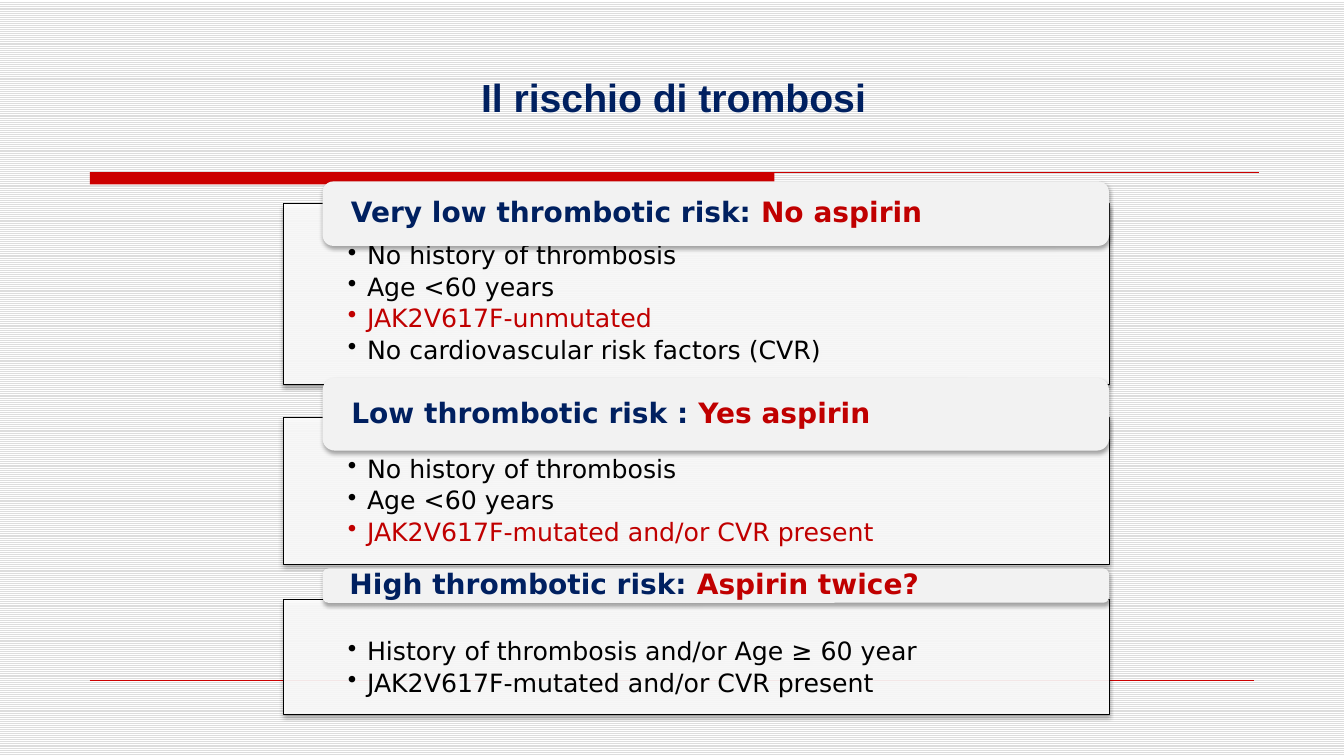
import dataclasses

import lxml.etree
import pptx
import pptx.dml.color
import pptx.enum.dml
import pptx.enum.shapes
import pptx.enum.text
import pptx.oxml
import pptx.oxml.ns
import pptx.util

PX = 9144  # EMU in one px, 100 px to the inch


@dataclasses.dataclass(frozen=True)
class Theme:
    navy: str = "002060"
    red: str = "C00000"
    rule: str = "CC0000"
    black: str = "000000"
    white: str = "FFFFFF"
    header: str = "F2F2F2"
    stripe: str = "DDDDDD"
    title_font: str = "Arial"
    text_font: str = "DejaVu Sans"
    title_size: int = 28
    header_size: int = 20
    item_size: int = 18


THEME = Theme()

BOX_LEFT, BOX_WIDTH = 281, 819
HEADER_LEFT, HEADER_WIDTH = 320, 780

# header top and height, box top and height, risk, advice, items (text, colour)
RISK_GROUPS = [
    (180, 64, 202, 179, "Very low thrombotic risk: ", "No aspirin", [
        ("No history of thrombosis", THEME.black),
        ("Age <60 years", THEME.black),
        ("JAK2V617F-unmutated", THEME.red),
        ("No cardiovascular risk factors (CVR)", THEME.black)]),
    (375, 72, 414, 146, "Low thrombotic risk : ", "Yes aspirin", [
        ("No history of thrombosis", THEME.black),
        ("Age <60 years", THEME.black),
        ("JAK2V617F-mutated and/or CVR present", THEME.red)]),
    (564, 34, 595, 114, "High thrombotic risk: ", "Aspirin twice?", [
        ("History of thrombosis and/or Age ≥ 60 year", THEME.black),
        ("JAK2V617F-mutated and/or CVR present", THEME.black)]),
]


def px(*lengths):
    return [pptx.util.Emu(length * PX) for length in lengths]


def rgb(colour):
    return pptx.dml.color.RGBColor.from_string(colour)


def add_child(parent, tag, **attributes):
    child = lxml.etree.SubElement(parent, pptx.oxml.ns.qn(tag))
    for name, value in attributes.items():
        child.set(name, str(value))
    return child


def set_font(font, name, size, colour=None, bold=False):
    font.name, font.size, font.bold = name, pptx.util.Pt(size), bold
    if colour:
        font.color.rgb = rgb(colour)


def set_frame(frame, margins, anchor):
    frame.word_wrap = True
    frame.vertical_anchor = anchor
    (frame.margin_left, frame.margin_top,
     frame.margin_right, frame.margin_bottom) = px(*margins)


def add_block(slide, kind, box, fill, line=None):
    shape = slide.shapes.add_shape(kind, *px(*box))
    shape.shadow.inherit = False
    shape.fill.solid()
    shape.fill.fore_color.rgb = rgb(fill)
    if line:
        shape.line.color.rgb = rgb(line)
        shape.line.width = pptx.util.Pt(0.75)
    else:
        shape.line.fill.background()
    return shape


def add_soft_shadow(shape):
    effects = shape._element.spPr.find(pptx.oxml.ns.qn("a:effectLst"))
    shadow = add_child(effects, "a:outerShdw", blurRad=pptx.util.Pt(3.1),
                       dist=pptx.util.Pt(1.8), dir=5400000, rotWithShape=0)
    colour = add_child(shadow, "a:srgbClr", val=THEME.black)
    add_child(colour, "a:alpha", val=35000)


def add_rule(slide, left, right, top, width):
    connector = slide.shapes.add_connector(
        pptx.enum.shapes.MSO_CONNECTOR.STRAIGHT, *px(left, top, right, top))
    connector.line.color.rgb = rgb(THEME.rule)
    connector.line.width = pptx.util.Pt(width)
    add_child(connector._element.spPr, "a:effectLst")


def add_title(slide, text):
    frame = slide.shapes.add_textbox(*px(237, 84, 862, 40)).text_frame
    set_frame(frame, (10, 5, 10, 5), pptx.enum.text.MSO_ANCHOR.BOTTOM)
    paragraph = frame.paragraphs[0]
    paragraph.text = text
    paragraph.alignment = pptx.enum.text.PP_ALIGN.CENTER
    set_font(paragraph.font, THEME.title_font, THEME.title_size, THEME.navy, True)


def add_item_box(slide, top, height, items):
    shape = add_block(slide, pptx.enum.shapes.MSO_SHAPE.RECTANGLE,
                      (BOX_LEFT, top, BOX_WIDTH, height), THEME.white, THEME.black)
    fill_colour = shape._element.spPr.find(".//" + pptx.oxml.ns.qn("a:srgbClr"))
    add_child(fill_colour, "a:alpha", val=90000)
    add_soft_shadow(shape)
    frame = shape.text_frame
    set_frame(frame, (64, 39, 64, 14), pptx.enum.text.MSO_ANCHOR.TOP)
    for index, (text, colour) in enumerate(items):
        paragraph = frame.add_paragraph() if index else frame.paragraphs[0]
        paragraph.text = text
        paragraph.alignment = pptx.enum.text.PP_ALIGN.LEFT
        paragraph.line_spacing = 0.9
        paragraph.space_after = pptx.util.Pt(3)
        set_font(paragraph.font, THEME.text_font, THEME.item_size, colour)
        # Hanging bullet, placed ahead of the default run properties
        properties = paragraph._p.get_or_add_pPr()
        properties.set("marL", str(19 * PX))
        properties.set("indent", str(-19 * PX))
        bullet = add_child(properties, "a:buChar", char="•")
        properties.find(pptx.oxml.ns.qn("a:defRPr")).addprevious(bullet)
        # The run repeats the colour so that the bullet takes it too
        paragraph.runs[0].font.color.rgb = rgb(colour)


def add_header(slide, top, height, risk, advice):
    shape = add_block(slide, pptx.enum.shapes.MSO_SHAPE.ROUNDED_RECTANGLE,
                      (HEADER_LEFT, top, HEADER_WIDTH, height), THEME.header)
    add_soft_shadow(shape)
    set_frame(shape.text_frame, (25, 0, 25, 0), pptx.enum.text.MSO_ANCHOR.MIDDLE)
    paragraph = shape.text_frame.paragraphs[0]
    paragraph.alignment = pptx.enum.text.PP_ALIGN.LEFT
    paragraph.line_spacing = 0.9
    set_font(paragraph.font, THEME.text_font, THEME.header_size, bold=True)
    for text, colour in ((risk, THEME.navy), (advice, THEME.red)):
        run = paragraph.add_run()
        run.text = text
        run.font.color.rgb = rgb(colour)


def main():
    presentation = pptx.Presentation()
    presentation.slide_width, presentation.slide_height = px(1333, 750)
    slide = presentation.slides.add_slide(presentation.slide_layouts[6])

    # Striped background
    background = slide.background.fill
    background.patterned()
    background.pattern = pptx.enum.dml.MSO_PATTERN.LIGHT_HORIZONTAL
    background.fore_color.rgb = rgb(THEME.stripe)
    background.back_color.rgb = rgb(THEME.white)

    # Title and red rules
    add_block(slide, pptx.enum.shapes.MSO_SHAPE.RECTANGLE,
              (89, 171, 679, 12), THEME.rule)
    add_rule(slide, 89, 1249, 171, 0.75)
    add_rule(slide, 89, 1244, 675, 0.25)
    add_title(slide, "Il rischio di trombosi")

    # Risk groups: each header overlaps its box
    for header_top, header_height, top, height, risk, advice, items in RISK_GROUPS:
        add_item_box(slide, top, height, items)
        add_header(slide, header_top, header_height, risk, advice)

    presentation.save("out.pptx")


if __name__ == "__main__":
    main()
